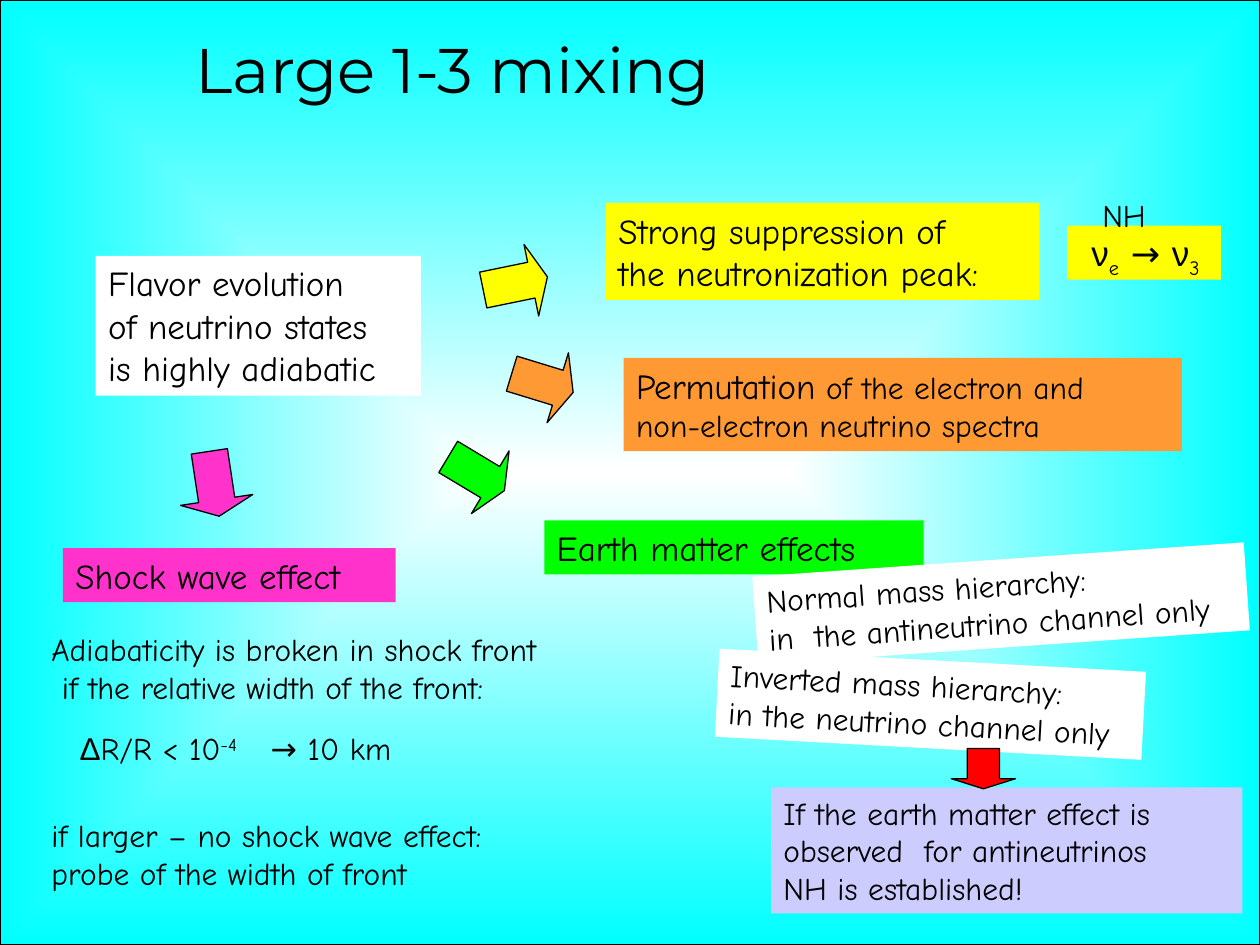
from dataclasses import dataclass

import pptx
import pptx.dml.color
import pptx.enum.shapes
import pptx.enum.text
import pptx.oxml
import pptx.oxml.ns
import pptx.util

Inches = pptx.util.Inches
SHAPE = pptx.enum.shapes.MSO_SHAPE
AUTO = pptx.enum.text.MSO_AUTO_SIZE
ANCHOR = pptx.enum.text.MSO_ANCHOR
ALIGN = pptx.enum.text.PP_ALIGN

BODY, GREEK = "Comic Neue", "Arial"
BLACK, WHITE, CYAN = "000000", "FFFFFF", "00FFFF"
YELLOW, ORANGE, GREEN = "FFFF00", "FF9933", "00FF00"
PINK, RED, LAVENDER = "FF33CC", "FF0000", "CCCCFF"


@dataclass
class Run:
    text: str
    font: str = BODY
    size: int | None = None
    baseline: int = 0


@dataclass
class Label:
    at: tuple[float, float, float, float]
    lines: list[str | list[Run]]
    size: int = 18
    fill: str | None = None
    rotation: float = 0
    wrap: bool = False


@dataclass
class Arrow:
    at: tuple[float, float, float, float]
    fill: str
    rotation: float = 0
    kind: SHAPE = SHAPE.RIGHT_ARROW


LABELS = [
    Label((4.32, 4.13, 3.01, 0.43), ["Earth matter effects"], 20, GREEN),
    Label((0.76, 2.03, 2.58, 1.11),
          ["Flavor evolution", "of neutrino states", "is highly adiabatic"], 20, WHITE),
    Label((4.81, 1.61, 3.44, 0.77),
          ["Strong suppression of", "the neutronization peak:"], 20, YELLOW),
    Label((8.47, 1.79, 1.22, 0.43),
          [[Run(" "), Run("ν", GREEK), Run("e", baseline=-25), Run(" → "),
            Run("ν", GREEK), Run("3", baseline=-25)]], 20, YELLOW),
    Label((8.65, 1.51, 0.59, 0.4), ["NH"]),
    Label((0.31, 4.95, 4.64, 0.7),
          ["Adiabaticity is broken in shock front", " if the relative width of the front:"]),
    Label((0.45, 5.74, 1.55, 0.4),
          [[Run(" "), Run("Δ", GREEK), Run("R/R < 10"), Run("-4", baseline=30)]]),
    Label((2.05, 5.74, 1.19, 0.4), ["→ 10 km"]),
    Label((0.5, 4.35, 2.64, 0.43), ["Shock wave effect"], 20, PINK),
    Label((0.31, 6.43, 3.99, 0.7),
          ["if larger – no shock wave effect:", "probe of the width of front"]),
    Label((5.99, 4.44, 3.91, 0.7),
          ["Normal mass hierarchy:", "in  the antineutrino channel only"],
          fill=WHITE, rotation=356),
    Label((5.69, 5.24, 3.39, 0.7),
          ["Inverted mass hierarchy:", "in the neutrino channel only"],
          fill=WHITE, rotation=3.1),
    Label((6.12, 6.25, 3.74, 1),
          ["If the earth matter effect is", "observed  for antineutrinos",
           "NH is established!"], fill=LAVENDER),
    Label((4.95, 2.84, 4.43, 0.74),
          [[Run("Permutation", size=20), Run(" of the electron and")],
           "non-electron neutrino spectra"], fill=ORANGE, wrap=True),
]

ARROWS = [
    Arrow((3.83, 1.96, 0.52, 0.58), YELLOW, 348.4),
    Arrow((4.05, 2.75, 0.51, 0.58), ORANGE, 17),
    Arrow((3.52, 3.47, 0.52, 0.58), GREEN, 31),
    Arrow((1.44, 3.55, 0.52, 0.58), PINK, 81.4),
    Arrow((7.55, 5.94, 0.51, 0.32), RED, kind=SHAPE.DOWN_ARROW),
]


def rgb(color: str):
    return pptx.dml.color.RGBColor.from_string(color)


def set_attrs(obj, values: dict) -> None:
    for name, value in values.items():
        setattr(obj, name, value)


def add_shape(slide, kind, at, fill=None, outlined=False):
    sp = slide.shapes.add_shape(kind, *map(Inches, at))
    sp.shadow.inherit = False
    if fill:
        sp.fill.solid()
        sp.fill.fore_color.rgb = rgb(fill)
    if outlined:
        sp.line.color.rgb = rgb(BLACK)
        sp.line.width = pptx.util.Pt(0.75)
    else:
        sp.line.fill.background()
    return sp


def add_background(slide) -> None:
    """Full-slide gradient radiating from a white centre."""
    sp = add_shape(slide, SHAPE.RECTANGLE, (0, 0, 10, 7.5), outlined=True)
    sp.fill.gradient()
    for stop, position, color in zip(sp.fill.gradient_stops, (0, 1), (WHITE, CYAN)):
        stop.position = position
        stop.color.rgb = rgb(color)
    qn = pptx.oxml.ns.qn
    grad = sp._element.spPr.find(qn("a:gradFill"))
    grad.replace(grad.find(qn("a:lin")), pptx.oxml.parse_xml(
        f'<a:path {pptx.oxml.ns.nsdecls("a")} path="shape">'
        '<a:fillToRect l="50000" t="50000" r="50000" b="50000"/></a:path>'))
    slide.shapes._spTree.insert(2, sp._element)


def add_run(p, run: Run, size: int) -> None:
    r = p.add_run()
    r.text = run.text
    set_attrs(r.font, {"name": run.font, "size": pptx.util.Pt(run.size or size)})
    r.font.color.rgb = rgb(BLACK)
    if run.baseline:
        r.font._element.set("baseline", str(run.baseline * 1000))


def add_label(slide, label: Label) -> None:
    if label.fill:
        sp = add_shape(slide, SHAPE.RECTANGLE, label.at, label.fill)
    else:
        sp = slide.shapes.add_textbox(*map(Inches, label.at))
    sp.rotation = label.rotation
    tf = sp.text_frame
    set_attrs(tf, {"word_wrap": label.wrap, "vertical_anchor": ANCHOR.TOP,
                   "auto_size": AUTO.SHAPE_TO_FIT_TEXT})
    for i, line in enumerate(label.lines):
        p = tf.add_paragraph() if i else tf.paragraphs[0]
        p.alignment = ALIGN.LEFT
        for run in [Run(line)] if isinstance(line, str) else line:
            add_run(p, run, label.size)


def add_arrow(slide, arrow: Arrow) -> None:
    sp = add_shape(slide, arrow.kind, arrow.at, arrow.fill, outlined=True)
    sp.rotation = arrow.rotation
    sp.adjustments[0], sp.adjustments[1] = 0.5, 0.25


def set_title(slide, text: str) -> None:
    sp = slide.shapes.title
    set_attrs(sp, {"left": Inches(0.4), "top": Inches(0.19),
                   "width": Inches(6.39), "height": Inches(1.35)})
    tf = sp.text_frame
    set_attrs(tf, {"word_wrap": False, "vertical_anchor": ANCHOR.TOP,
                   "auto_size": AUTO.NONE})
    p = tf.paragraphs[0]
    p.alignment = ALIGN.CENTER
    add_run(p, Run(text, "Montserrat"), 36)


def main() -> None:
    prs = pptx.Presentation()
    set_attrs(prs, {"slide_width": Inches(10), "slide_height": Inches(7.5)})
    slide = prs.slides.add_slide(prs.slide_layouts[5])
    add_background(slide)
    set_title(slide, "Large 1-3 mixing")
    for label in LABELS:
        add_label(slide, label)
    for arrow in ARROWS:
        add_arrow(slide, arrow)
    prs.save("out.pptx")


if __name__ == "__main__":
    main()
